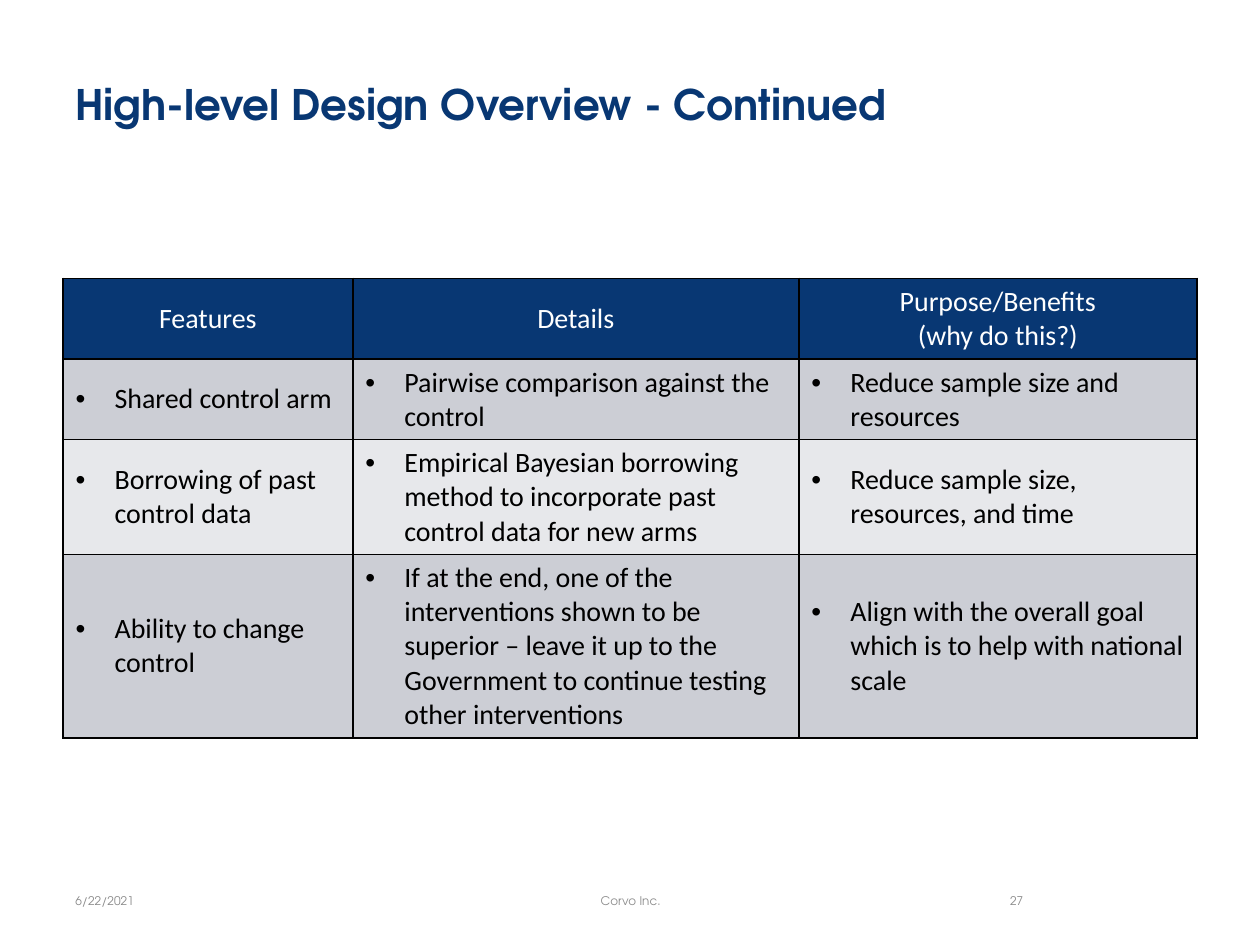
from dataclasses import dataclass
from lxml.etree import SubElement as Sub
from pptx import Presentation as Deck
from pptx.dml.color import RGBColor as Color
from pptx.enum.text import MSO_ANCHOR as Anchor, PP_ALIGN as Align
from pptx.oxml import parse_xml
from pptx.oxml.ns import nsdecls, qn
from pptx.util import Inches, Pt

TITLE = "High-level Design Overview - Continued"
HEADS = ["Features", "Details", "Purpose/Benefits\n(why do this?)"]
ROWS = [
    ["Shared control arm",
     "Pairwise comparison against the control",
     "Reduce sample size and resources"],
    ["Borrowing of past control data",
     "Empirical Bayesian borrowing method to incorporate past control data for new arms",
     "Reduce sample size, resources, and time"],
    ["Ability to change control",
     "If at the end, one of the interventions shown to be superior – "
     "leave it up to the Government to continue testing other interventions",
     "Align with the overall goal which is to help with national scale"],
]
FOOT = [
    ("6/22/2021", 0.5, 2.33, Align.LEFT, "898989"),
    ("Corvo Inc.", 3.42, 3.17, Align.CENTER, "8C8C8C"),
    ("27", 7.17, 1.05, Align.RIGHT, "898989"),
]


@dataclass(frozen=True)
class Theme:
    navy: str = "083773"
    white: str = "FFFFFF"
    black: str = "000000"
    bands: tuple = ("CCCED5", "E7E8EB")
    head: str = "TeX Gyre Adventor"
    body: str = "Calibri"
    big: float = 24
    mid: float = 16
    small: float = 6.8


LOOK = Theme()
WIDE, HIGH = 10, 7.5
EDGE = WIDE * 0.05
COLS = [2.3, 3.54, 3.16]
TALL = [0.64, 0.64, 0.91, 1.46]
TOP = 2.21
DENT = 0.31


def style(para, face, size, tint, align=Align.LEFT, bold=False):
    para.alignment = align
    font = para.font
    font.name, font.size, font.bold = face, Pt(size), bold
    font.color.rgb = Color.from_string(tint)


def label(slide, text, spot, *look, **more):
    frame = slide.shapes.add_textbox(*map(Inches, spot)).text_frame
    frame.word_wrap = True
    frame.vertical_anchor = Anchor.MIDDLE
    frame.text = text
    style(frame.paragraphs[0], LOOK.head, *look, **more)


def bullet(para):
    props = para._p.get_or_add_pPr()
    props.set("marL", str(Inches(DENT)))
    props.set("indent", str(-Inches(DENT)))
    Sub(props, qn("a:buFont"), typeface="Arial")
    Sub(props, qn("a:buChar"), char="•")


def border(cell):
    props = cell._tc.get_or_add_tcPr()
    for spot, side in enumerate("LRTB"):
        props.insert(spot, parse_xml(
            f'<a:ln{side} {nsdecls("a")} w="{Pt(1)}"><a:solidFill>'
            f'<a:srgbClr val="{LOOK.black}"/></a:solidFill></a:ln{side}>'))


def fill(cell, text, row):
    cell.text = text
    cell.vertical_anchor = Anchor.MIDDLE
    cell.fill.solid()
    shade = LOOK.bands[(row - 1) % 2] if row else LOOK.navy
    cell.fill.fore_color.rgb = Color.from_string(shade)
    border(cell)
    for para in cell.text_frame.paragraphs:
        if row:
            bullet(para)
        tint, align = (LOOK.black, Align.LEFT) if row else (LOOK.white, Align.CENTER)
        style(para, LOOK.body, LOOK.mid, tint, align)


def grid(slide):
    spot = map(Inches, (EDGE, TOP, sum(COLS), sum(TALL)))
    table = slide.shapes.add_table(len(TALL), len(COLS), *spot).table
    for col, wide in zip(table.columns, COLS):
        col.width = Inches(wide)
    for row, tall in zip(table.rows, TALL):
        row.height = Inches(tall)
    for row, texts in enumerate([HEADS, *ROWS]):
        for col, text in enumerate(texts):
            fill(table.cell(row, col), text, row)


def main():
    deck = Deck()
    deck.slide_width, deck.slide_height = Inches(WIDE), Inches(HIGH)
    slide = deck.slides.add_slide(deck.slide_layouts[6])
    label(slide, TITLE, (EDGE, 0.3, WIDE - 2 * EDGE, 1.04),
          LOOK.big, LOOK.navy, bold=True)
    grid(slide)
    for text, left, wide, align, tint in FOOT:
        label(slide, text, (left, 6.95, wide, 0.4), LOOK.small, tint, align)
    deck.save("out.pptx")


if __name__ == "__main__":
    main()
